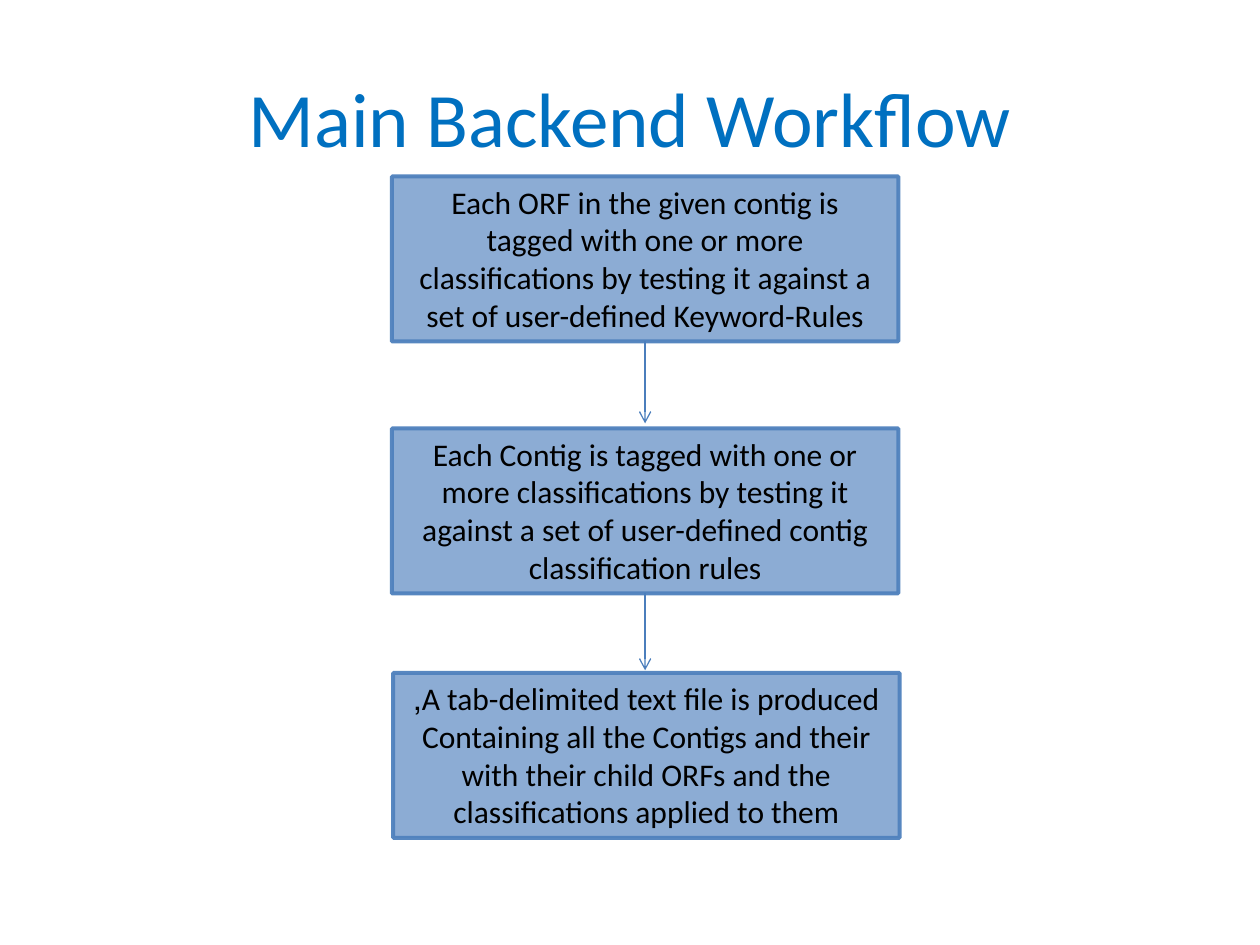
from lxml import etree
from pptx import Presentation
from pptx.dml.color import RGBColor
from pptx.enum.shapes import MSO_CONNECTOR as Connector, MSO_SHAPE as Shape
from pptx.enum.text import MSO_ANCHOR as Anchor, MSO_AUTO_SIZE as AutoSize, PP_ALIGN as Align
from pptx.oxml.ns import qn
from pptx.util import Inches, Pt

BOX_WIDTH, BOX_HEIGHT = 4.02, 1.31
TITLE_FORMAT = {"name": "Calibri", "size": Pt(44)}
STEP_FORMAT = {"name": "Calibri", "size": Pt(18)}

# Left, top and paragraphs of each step
STEPS = [
    (3.11, 1.4, ["Each ORF in the given contig is tagged with one or more classifications "
                 "by testing it against a set of user-defined Keyword-Rules"]),
    (3.11, 3.4, ["Each Contig is tagged with one or more classifications by testing it "
                 "against a set of user-defined contig classification rules"]),
    (3.12, 5.34, ["A tab-delimited text file is produced,",
                  "Containing all the Contigs and their with their child ORFs and the "
                  "classifications applied to them"]),
]
ARROW_ENDS = [3.36, 5.32]


def color(value):
    return RGBColor.from_string(value)


def set_alpha(fill_parent, percent):
    """Make the solid fill below the given element partly transparent."""
    color_element = fill_parent.find(qn("a:solidFill"))[0]
    etree.SubElement(color_element, qn("a:alpha")).set("val", str(percent * 1000))


def write_text(frame, paragraphs, font_format, font_color, anchor):
    """Fill a frame with centred right-to-left paragraphs."""
    frame.word_wrap = True
    frame.vertical_anchor = anchor
    for index, text in enumerate(paragraphs):
        paragraph = frame.paragraphs[0] if index == 0 else frame.add_paragraph()
        paragraph.alignment = Align.CENTER
        paragraph._p.get_or_add_pPr().set("rtl", "1")
        run = paragraph.add_run()
        run.text = text
        for name, value in font_format.items():
            setattr(run.font, name, value)
        run.font.color.rgb = color(font_color)


def add_title(slide, left, top, width, height):
    box = slide.shapes.add_textbox(Inches(left), Inches(top), Inches(width), Inches(height))
    write_text(box.text_frame, ["Main Backend Workflow"], TITLE_FORMAT, "0070C0", Anchor.MIDDLE)


def add_step(slide, left, top, paragraphs):
    box = slide.shapes.add_shape(Shape.RECTANGLE, Inches(left), Inches(top),
                                 Inches(BOX_WIDTH), Inches(BOX_HEIGHT))
    box.shadow.inherit = False
    box.fill.solid()
    box.fill.fore_color.rgb = color("4F81BD")
    set_alpha(box._element.spPr, 65)
    box.line.color.rgb = color("4F81BD")
    box.line.width = Pt(2.25)
    set_alpha(box._element.spPr.find(qn("a:ln")), 95)
    write_text(box.text_frame, paragraphs, STEP_FORMAT, "000000", Anchor.TOP)
    box.text_frame.auto_size = AutoSize.SHAPE_TO_FIT_TEXT
    return box


def add_arrow(slide, box, end):
    """Draw an arrow from the bottom of a box straight down to the given height."""
    middle = box.left + box.width // 2
    arrow = slide.shapes.add_connector(Connector.STRAIGHT, middle, box.top + box.height,
                                       middle, Inches(end))
    arrow.begin_connect(box, 2)
    arrow.line.color.rgb = color("4B7EBC")
    arrow.line.width = Pt(0.75)
    properties = arrow._element.spPr
    etree.SubElement(properties.find(qn("a:ln")), qn("a:tailEnd")).set("type", "arrow")
    etree.SubElement(properties, qn("a:effectLst"))


def add_workflow(slide):
    boxes = [add_step(slide, *step) for step in STEPS]
    for box, end in zip(boxes, ARROW_ENDS):
        add_arrow(slide, box, end)


def main():
    presentation = Presentation()
    presentation.slide_width, presentation.slide_height = Inches(10), Inches(7.5)
    slide = presentation.slides.add_slide(presentation.slide_layouts[6])
    add_title(slide, 0.5, 0.3, 9, 1.25)
    add_workflow(slide)
    presentation.save("out.pptx")


if __name__ == "__main__":
    main()
